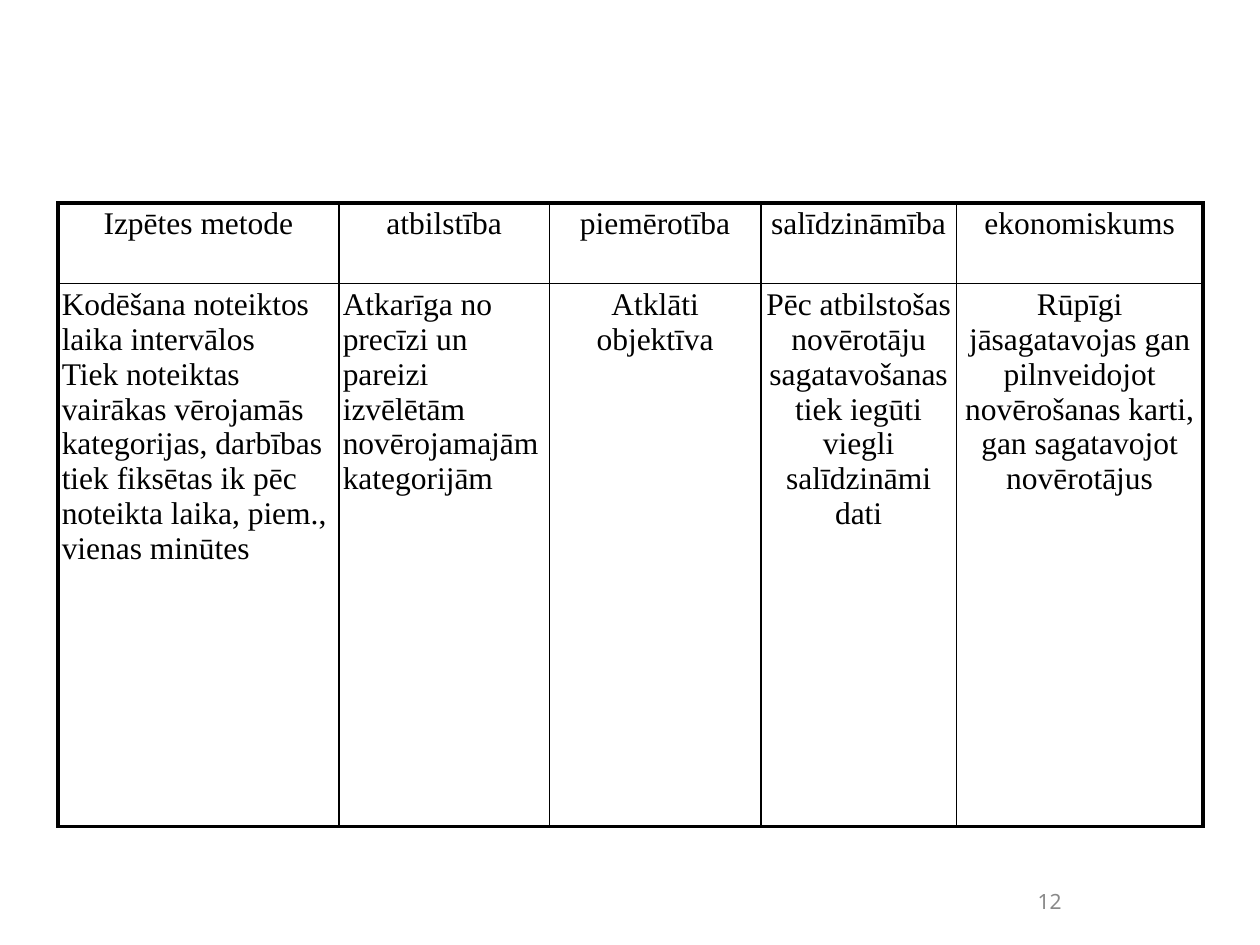
from pptx import Presentation
from pptx.dml.color import RGBColor
from pptx.enum.text import MSO_ANCHOR, PP_ALIGN
from pptx.oxml.ns import qn
from pptx.util import Pt
from lxml.etree import SubElement

HEADINGS = ["Izpētes metode", "atbilstība", "piemērotība", "salīdzināmība", "ekonomiskums"]
ASSESSMENT = [
    "Kodēšana noteiktos laika intervālos\n"
    "Tiek noteiktas vairākas vērojamās kategorijas, darbības tiek fiksētas "
    "ik pēc noteikta laika, piem., vienas minūtes",
    "Atkarīga no precīzi un pareizi izvēlētām novērojamajām kategorijām",
    "Atklāti objektīva",
    "Pēc atbilstošas novērotāju sagatavošanas tiek iegūti viegli salīdzināmi dati",
    "Rūpīgi jāsagatavojas gan pilnveidojot novērošanas karti, gan sagatavojot novērotājus",
]
ROWS = [HEADINGS, ASSESSMENT]
COLUMN_WIDTHS = [160.6, 120.2, 121, 111.6, 141]
ROW_HEIGHTS = [46.1, 310.3]
TABLE_LEFT, TABLE_TOP = 33.1, 115.9
CELL_MARGIN = 2.2
LEFT_ALIGNED = {(1, 0), (1, 1)}
INNER_LINE, OUTER_LINE = 1, 2.25
PAGE_NUMBER = "12"
COLORS = {"ink": "000000", "page number": "898989"}


def format_text(frame, font_name, size, color, align):
    for paragraph in frame.paragraphs:
        paragraph.alignment = align
        for run in paragraph.runs:
            run.font.name = font_name
            run.font.size = Pt(size)
            run.font.color.rgb = RGBColor.from_string(COLORS[color])


def set_borders(cell, widths):
    properties = cell._tc.get_or_add_tcPr()
    for position, (side, width) in enumerate(widths.items()):
        line = properties.makeelement(qn(f"a:ln{side}"), {"w": str(Pt(width))})
        properties.insert(position, line)
        fill = SubElement(line, qn("a:solidFill"))
        SubElement(fill, qn("a:srgbClr"), val=COLORS["ink"])


def add_method_table(slide):
    row_count, column_count = len(ROWS), len(HEADINGS)
    table = slide.shapes.add_table(
        row_count, column_count, Pt(TABLE_LEFT), Pt(TABLE_TOP),
        Pt(sum(COLUMN_WIDTHS)), Pt(sum(ROW_HEIGHTS)),
    ).table
    table.first_row = table.horz_banding = False
    for column, width in zip(table.columns, COLUMN_WIDTHS):
        column.width = Pt(width)
    for r, (row, height) in enumerate(zip(ROWS, ROW_HEIGHTS)):
        table.rows[r].height = Pt(height)
        for c, wording in enumerate(row):
            cell = table.cell(r, c)
            cell.fill.background()
            cell.margin_left = cell.margin_right = Pt(CELL_MARGIN)
            cell.margin_top = cell.margin_bottom = Pt(CELL_MARGIN)
            cell.text_frame.text = wording
            align = PP_ALIGN.LEFT if (r, c) in LEFT_ALIGNED else PP_ALIGN.CENTER
            format_text(cell.text_frame, "Times New Roman", 18, "ink", align)
            on_edge = {"L": c == 0, "R": c == column_count - 1,
                       "T": r == 0, "B": r == row_count - 1}
            set_borders(cell, {side: OUTER_LINE if edge else INNER_LINE
                               for side, edge in on_edge.items()})


def add_page_number(slide):
    frame = slide.shapes.add_textbox(Pt(587.5), Pt(503.3), Pt(24.5), Pt(23)).text_frame
    frame.margin_left = frame.margin_right = 0
    frame.word_wrap = False
    frame.vertical_anchor = MSO_ANCHOR.MIDDLE
    frame.text = PAGE_NUMBER
    format_text(frame, "Noto Sans", 12, "page number", PP_ALIGN.CENTER)


def main():
    """Build the slide that assesses an observation method."""
    presentation = Presentation()
    presentation.slide_width, presentation.slide_height = Pt(720), Pt(540)
    slide = presentation.slides.add_slide(presentation.slide_layouts[6])
    add_page_number(slide)
    add_method_table(slide)
    presentation.save("out.pptx")


if __name__ == "__main__":
    main()
